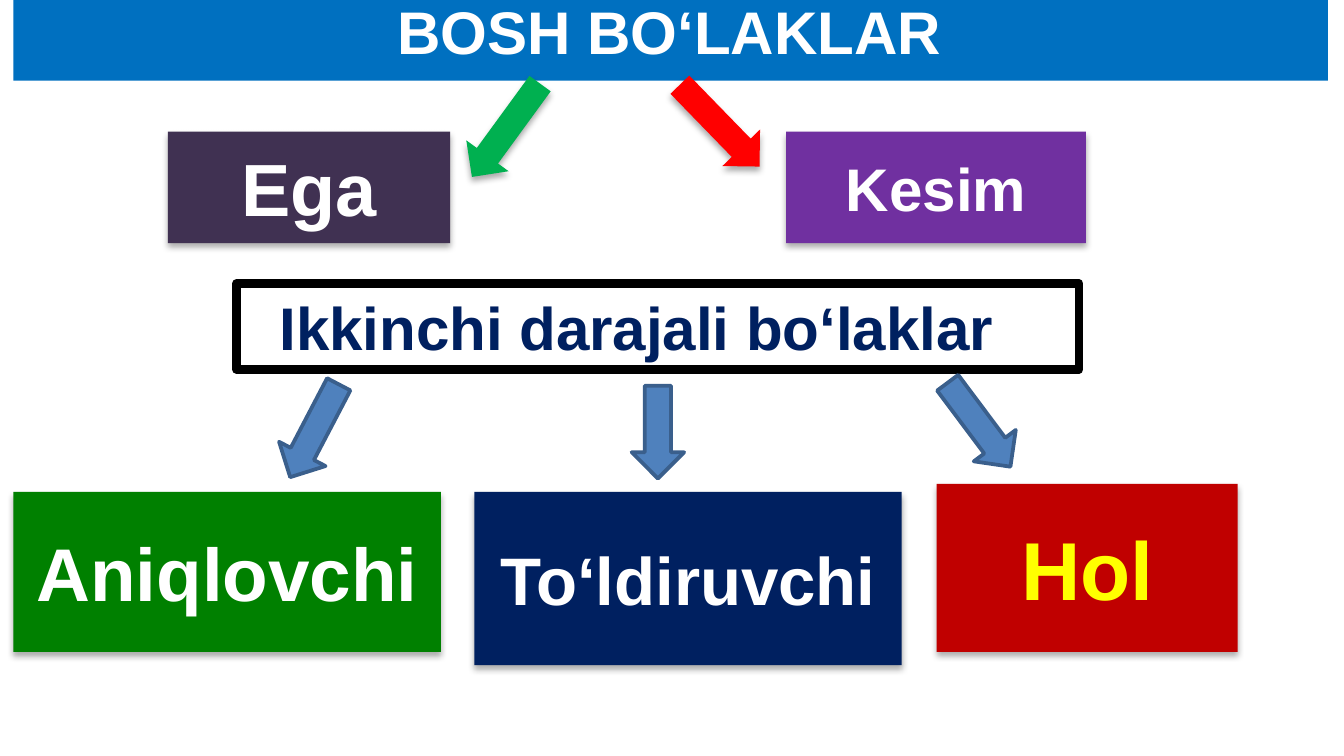
from lxml.etree import SubElement as Sub
from pptx import Presentation
from pptx.dml.color import RGBColor as Rgb
from pptx.enum.shapes import MSO_SHAPE as Kind
from pptx.enum.text import MSO_ANCHOR as Anchor, PP_ALIGN as Align
from pptx.oxml.ns import qn
from pptx.util import Inches, Pt

WIDE = 10
HIGH = WIDE * 9 / 16
CELL = 0.1
WHITE, NAVY, STEEL = "FFFFFF", "002060", "4F81BD"


def grid(*cells):
    """Turn counts of grid cells into lengths."""
    return [Inches(n * CELL) for n in cells]


def paint(fill, code):
    """Fill with a solid colour."""
    fill.solid()
    fill.fore_color.rgb = Rgb.from_string(code)


def shade(shape):
    """Drop a soft shadow straight below a shape."""
    glow = Sub(shape._element.spPr.find(qn("a:effectLst")), qn("a:outerShdw"),
               blurRad=str(Pt(3.5)), dist=str(Pt(2.2)), dir="5400000", rotWithShape="0")
    black = Sub(glow, qn("a:srgbClr"), val="000000")
    Sub(black, qn("a:alpha"), val="32000")


def write(shape, text, size, code, align=Align.CENTER):
    """Set one bold line of text in a shape."""
    frame = shape.text_frame
    frame.word_wrap = True
    frame.text = text
    para = frame.paragraphs[0]
    para.alignment = align
    font = para.font
    font.name, font.size, font.bold = "Arial", Pt(size), True
    paint(font.fill, code)
    return frame


def draw(slide, kind, place, fill=None, line=None, width=2, turn=0):
    """Add a preset shape with an optional fill and outline."""
    shape = slide.shapes.add_shape(kind, *grid(*place))
    shape.shadow.inherit = False
    shape.rotation = turn
    if fill:
        paint(shape.fill, fill)
    else:
        shape.fill.background()
    if line:
        paint(shape.line.fill, line)
        shape.line.width = Pt(width)
        Sub(shape.line._ln, qn("a:round"))
    else:
        shape.line.fill.background()
    return shape


def head(slide):
    """Add the title band and its text."""
    draw(slide, Kind.RECTANGLE, (1, -1.1, 97.8, 7.1), "0070C0")
    box = slide.shapes.add_textbox(*grid(1, -0.65, 97.6, 5.6))
    frame = write(box, "BOSH BO‘LAKLAR", 32.2, WHITE)
    frame.margin_left = frame.margin_right = frame.margin_bottom = 0
    frame.margin_top = Inches(0.02)


def group(slide):
    """Add the framed heading of the second group."""
    box = draw(slide, Kind.RECTANGLE, (17.6, 21.1, 62.7, 6.4), line="000000", width=4.5)
    frame = write(box, "Ikkinchi darajali bo‘laklar", 32.2, NAVY, Align.LEFT)
    frame.vertical_anchor = Anchor.TOP
    frame.margin_left = Inches(0.32)


def card(slide, text, place, fill, size, code=WHITE):
    """Add a shadowed box with a term."""
    box = draw(slide, Kind.RECTANGLE, place, fill)
    shade(box)
    write(box, text, size, code)


def main():
    """Build the slide and save it."""
    deck = Presentation()
    deck.slide_width, deck.slide_height = Inches(WIDE), Inches(HIGH)
    slide = deck.slides.add_slide(deck.slide_layouts[6])
    head(slide)
    group(slide)
    for place, fill, turn in (
        ((35.7, 5.4, 3.9, 8.6), "00B050", 36.1),
        ((51.6, 5.1, 3.9, 8.5), "FF0000", 315.8),
    ):
        shade(draw(slide, Kind.DOWN_ARROW, place, fill, turn=turn))
    card(slide, "Aniqlovchi", (1, 36.6, 31.8, 11.9), "008000", 40)
    card(slide, "Ega", (12.5, 9.8, 21, 8.3), "403152", 39.6)
    card(slide, "Kesim", (58.5, 9.8, 22.3, 8.3), "7030A0", 32.2)
    for kind, place, turn in (
        (Kind.RIGHT_ARROW, (19.5, 30.1, 7.8, 3.9), 117.6),
        (Kind.DOWN_ARROW, (47, 28.7, 3.9, 6.9), 0),
        (Kind.DOWN_ARROW, (70.9, 27.7, 3.9, 7.8), 323.2),
    ):
        draw(slide, kind, place, STEEL, "3A5F8C", turn=turn)
    card(slide, "To‘ldiruvchi", (35.3, 36.6, 31.8, 12.9), NAVY, 36)
    card(slide, "Hol", (69.7, 36, 22.4, 12.5), "C00000", 44, "FFFF00")
    deck.save("out.pptx")


if __name__ == "__main__":
    main()
